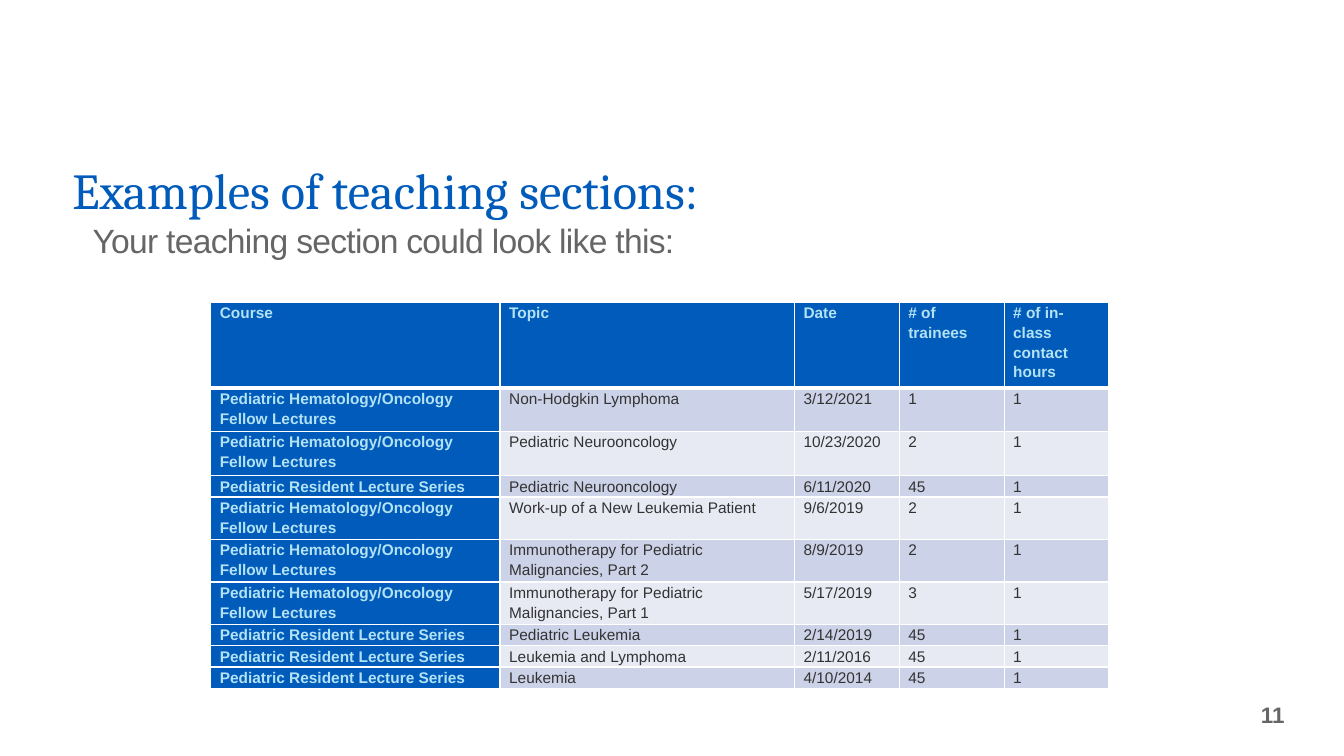
from pptx import Presentation
from pptx.dml.color import RGBColor
from pptx.enum.text import MSO_ANCHOR as Anchor, PP_ALIGN as Align
from pptx.oxml import parse_xml
from pptx.oxml.ns import nsdecls
from pptx.util import Inches, Pt

BLUE, SKY, GRAY, DARK = "005BBB", "B3E2F5", "666666", "333333"
BANDS = "CCD2E7", "E7EAF3"


def color(code):
    return RGBColor.from_string(code)


def write(para, text, size, code, bold=False, face="Arial"):
    run = para.add_run()
    run.text = text
    font = run.font
    font.name, font.size, font.bold = face, Pt(size), bold
    font.color.rgb = color(code)
    return run


deck = Presentation()
deck.slide_width, deck.slide_height = Inches(13.33), Inches(7.5)
slide = deck.slides.add_slide(deck.slide_layouts[6])

# Title
title = slide.shapes.add_textbox(Inches(0.62), Inches(1.44), Inches(11.5), Inches(0.78))
frame = title.text_frame
frame.word_wrap = True
frame.vertical_anchor = Anchor.BOTTOM
frame.paragraphs[0].line_spacing = 0.8
write(frame.paragraphs[0], "Examples of teaching sections:", 36, BLUE, face="Cambria")

# Subtitle
lead = slide.shapes.add_textbox(Inches(0.82), Inches(2.11), Inches(6.03), Inches(0.91))
frame = lead.text_frame
frame.word_wrap = False
frame.vertical_anchor = Anchor.TOP
frame.margin_top = Inches(0.07)
run = write(frame.paragraphs[0], "Your teaching section could look like this:", 24, GRAY)
run.font._element.set("spc", "-50")

# Table of lectures
FELLOW = "Pediatric Hematology/Oncology Fellow Lectures"
SERIES = "Pediatric Resident Lecture Series"
rows = [
    ("Course", "Topic", "Date", "# of trainees", "# of in-class contact hours"),
    (FELLOW, "Non-Hodgkin Lymphoma", "3/12/2021", "1", "1"),
    (FELLOW, "Pediatric Neurooncology", "10/23/2020", "2", "1"),
    (SERIES, "Pediatric Neurooncology", "6/11/2020", "45", "1"),
    (FELLOW, "Work-up of a New Leukemia Patient", "9/6/2019", "2", "1"),
    (FELLOW, "Immunotherapy for Pediatric Malignancies, Part 2", "8/9/2019", "2", "1"),
    (FELLOW, "Immunotherapy for Pediatric Malignancies, Part 1", "5/17/2019", "3", "1"),
    (SERIES, "Pediatric Leukemia", "2/14/2019", "45", "1"),
    (SERIES, "Leukemia and Lymphoma", "2/11/2016", "45", "1"),
    (SERIES, "Leukemia", "4/10/2014", "45", "1"),
]
widths = [2.87, 2.92, 1.04, 1.04, 1.04]
heights = [0.85, 0.43, 0.44, 0.2, 0.42, 0.42, 0.42, 0.2, 0.2, 0.2]
table = slide.shapes.add_table(
    len(rows), len(widths), Inches(2.09), Inches(3), Inches(8.9), Inches(3.78)
).table
for col, width in zip(table.columns, widths):
    col.width = Inches(width)

for r, (texts, height) in enumerate(zip(rows, heights)):
    table.rows[r].height = Inches(height)
    for c, text in enumerate(texts):
        cell = table.cell(r, c)
        head = r == 0 or c == 0
        cell.margin_left = cell.margin_right = Inches(0.09)
        cell.margin_top = cell.margin_bottom = 0

        # White borders, thicker below the header
        for side in "LRTB":
            thick = (r, side) in ((0, "B"), (1, "T"))
            cell._tc.get_or_add_tcPr().append(parse_xml(
                f'<a:ln{side} {nsdecls("a")} w="{Pt(3 if thick else 1)}"><a:solidFill>'
                f'<a:srgbClr val="FFFFFF"/></a:solidFill></a:ln{side}>'))
        cell.fill.solid()
        cell.fill.fore_color.rgb = color(BLUE if head else BANDS[(r - 1) % 2])

        para = cell.text_frame.paragraphs[0]
        para.line_spacing = 1.15
        para.space_after = Pt(10)
        write(para, text, 11, SKY if head else DARK, head)

# Slide number
number = slide.shapes.add_textbox(Inches(12.08), Inches(6.8), Inches(0.79), Inches(0.58))
frame = number.text_frame
frame.word_wrap = True
frame.vertical_anchor = Anchor.MIDDLE
frame.margin_left = frame.margin_right = Inches(0.13)
frame.margin_top = frame.margin_bottom = Inches(0.07)
frame.paragraphs[0].alignment = Align.RIGHT
write(frame.paragraphs[0], "11", 16, GRAY, True)

deck.save("out.pptx")
